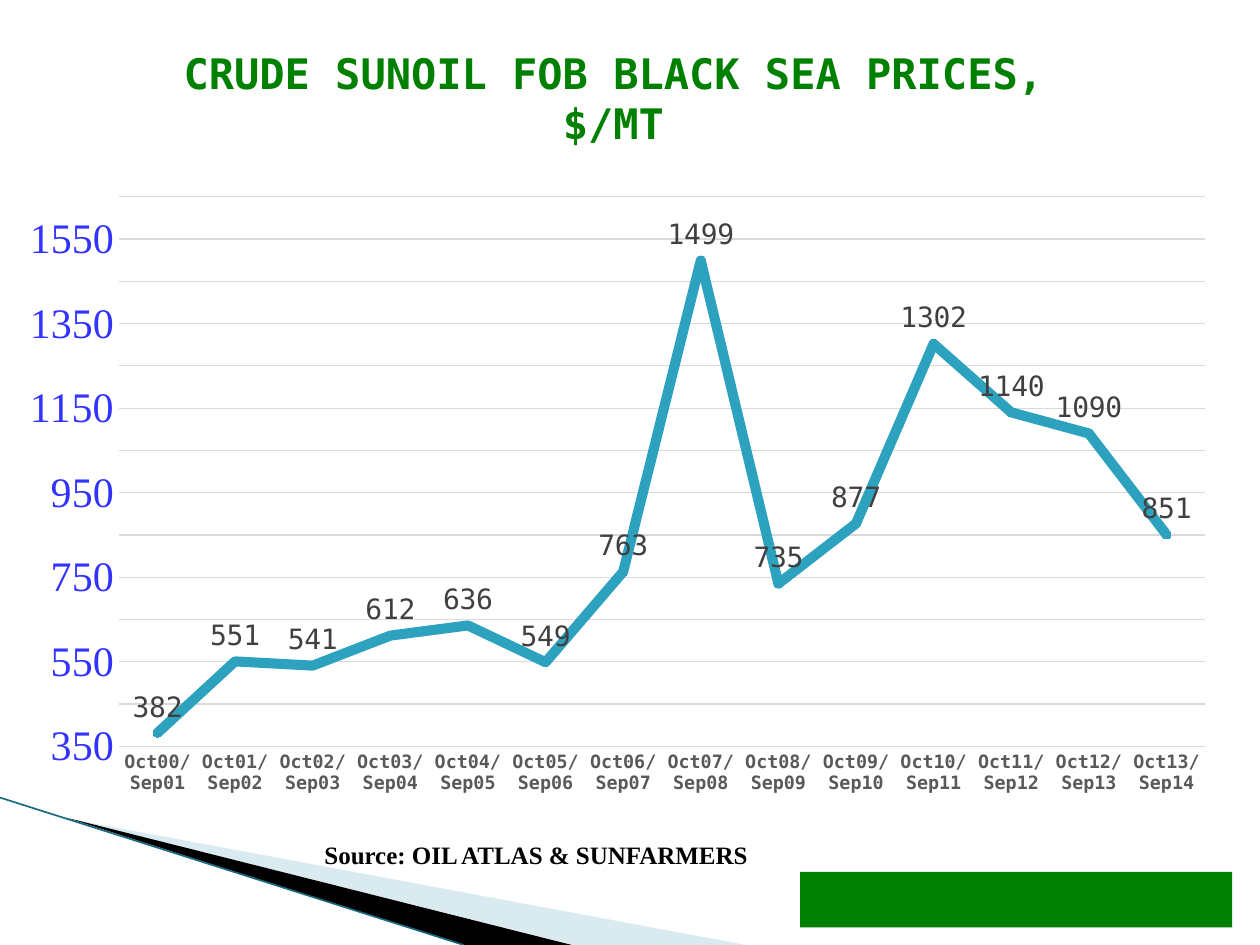
from dataclasses import dataclass

from lxml import etree
from pptx import Presentation
from pptx import util as u
from pptx.chart import data as chart_data
from pptx.dml import color
from pptx.enum import chart as charts
from pptx.enum import shapes, text
from pptx.oxml import ns

WIDTH, HEIGHT = u.Inches(10), u.Inches(7.5)
COLUMNS, ROWS = 100, 75
PRICES = [382, 551, 541, 612, 636, 549, 763, 1499, 735, 877, 1302, 1140, 1090, 851]
SEASONS = [f"Oct{year:02d}/Sep{year + 1:02d}" for year in range(len(PRICES))]
TITLE = "CRUDE SUNOIL FOB BLACK SEA PRICES,\n$/MT"


@dataclass(frozen=True)
class Theme:
    green: str = "008000"
    series: str = "2DA2BF"
    values: str = "3333FF"
    labels: str = "404040"
    seasons: str = "595959"
    grid: str = "D9D9D9"
    black: str = "000000"
    sweep: str = "A0CBDC"
    edge: str = "1B6B80"
    mono: str = "DejaVu Sans Mono"
    serif: str = "Times New Roman"
    title_size: float = 24
    value_size: float = 24
    label_size: float = 16
    season_size: float = 10.5
    source_size: float = 14.3
    chart_size: float = 10


THEME = Theme()


def across(columns):
    return int(WIDTH * columns / COLUMNS)


def down(rows):
    return int(HEIGHT * rows / ROWS)


def area(left, top, width, height):
    return across(left), down(top), across(width), down(height)


def rgb(value):
    return color.RGBColor.from_string(value)


def set_values(target, values):
    for name, value in values.items():
        setattr(target, name, value)


def set_font(font, name, size, shade, bold=False):
    set_values(font, {"name": name, "size": u.Pt(size), "bold": bold})
    font.color.rgb = rgb(shade)


def set_line(line, shade, width):
    line.color.rgb = rgb(shade)
    line.width = u.Pt(width)


def set_plain_fill(shape, shade):
    shape.shadow.inherit = False
    shape.fill.solid()
    shape.fill.fore_color.rgb = rgb(shade)
    shape.line.fill.background()


def add_sweep(page, points, shade, opacity=100):
    corners = [(across(x), down(y)) for x, y in points]
    builder = page.shapes.build_freeform(*corners[0])
    builder.add_line_segments(corners[1:], close=True)
    sweep = builder.convert_to_shape()
    set_plain_fill(sweep, shade)
    if opacity < 100:
        fill = sweep._element.spPr.find(ns.qn("a:solidFill"))
        etree.SubElement(fill[0], ns.qn("a:alpha"), val=str(opacity * 1000))


def add_edge(page, start, end):
    edge = page.shapes.add_connector(
        shapes.MSO_CONNECTOR.STRAIGHT,
        across(start[0]), down(start[1]), across(end[0]), down(end[1]),
    )
    set_line(edge.line, THEME.edge, 0.95)
    etree.SubElement(edge._element.spPr, ns.qn("a:effectLst"))


def add_block(page, place, shade):
    block = page.shapes.add_shape(shapes.MSO_SHAPE.RECTANGLE, *area(*place))
    set_plain_fill(block, shade)


def add_source(page, place, words):
    box = page.shapes.add_textbox(*area(*place))
    anchor = text.MSO_ANCHOR.MIDDLE
    set_values(box.text_frame, {"word_wrap": True, "vertical_anchor": anchor})
    para = box.text_frame.paragraphs[0]
    para.alignment = text.PP_ALIGN.CENTER
    span = para.add_run()
    span.text = words
    set_font(span.font, THEME.serif, THEME.source_size, THEME.black, True)


def set_layout(parent, shares, inner=False):
    for old in parent.findall(ns.qn("c:layout")):
        parent.remove(old)
    layout = etree.Element(ns.qn("c:layout"))
    manual = etree.SubElement(layout, ns.qn("c:manualLayout"))
    if inner:
        etree.SubElement(manual, ns.qn("c:layoutTarget"), val="inner")
    for side in ("xMode", "yMode"):
        etree.SubElement(manual, ns.qn(f"c:{side}"), val="edge")
    for side, share in shares.items():
        etree.SubElement(manual, ns.qn(f"c:{side}"), val=str(share))
    text_part = parent.find(ns.qn("c:tx"))
    if text_part is None:
        parent.insert(0, layout)
    else:
        text_part.addnext(layout)


def format_title(chart):
    chart.has_title = True
    title = chart.chart_title
    title.include_in_layout = False
    title.text_frame.text = TITLE
    for para in title.text_frame.paragraphs:
        para.alignment = text.PP_ALIGN.CENTER
        set_font(para.runs[0].font, THEME.mono, THEME.title_size, THEME.green, True)
    set_layout(title._element, {"x": 0.14, "y": 0})


def format_axes(chart):
    tick = charts.XL_TICK_MARK.NONE
    for axis in (chart.category_axis, chart.value_axis):
        set_values(axis, {"major_tick_mark": tick, "minor_tick_mark": tick})
    seasons, values = chart.category_axis, chart.value_axis
    set_font(seasons.tick_labels.font, THEME.mono, THEME.season_size, THEME.seasons, True)
    set_line(seasons.format.line, THEME.grid, 0.75)
    set_values(values, {"minimum_scale": 350, "maximum_scale": 1650, "major_unit": 100,
                        "has_major_gridlines": True})
    set_font(values.tick_labels.font, THEME.serif, THEME.value_size, THEME.values)
    values.format.line.fill.background()
    set_line(values.major_gridlines.format.line, THEME.grid, 0.75)


def format_series(series):
    series.smooth = False
    set_line(series.format.line, THEME.series, 5.75)
    set_values(series.marker, {"style": charts.XL_MARKER_STYLE.CIRCLE, "size": 5})
    series.marker.format.fill.solid()
    series.marker.format.fill.fore_color.rgb = rgb(THEME.series)
    series.marker.format.line.color.rgb = rgb(THEME.series)
    labels = series.data_labels
    set_values(labels, {"show_value": True, "position": charts.XL_LABEL_POSITION.ABOVE})
    set_font(labels.font, THEME.mono, THEME.label_size, THEME.labels)


def add_price_chart(page, place):
    prices = chart_data.CategoryChartData()
    prices.categories = SEASONS
    prices.add_series("Series 1", PRICES)
    kind = charts.XL_CHART_TYPE.LINE_MARKERS
    chart = page.shapes.add_chart(kind, *area(*place), prices).chart
    chart.has_legend = False
    set_font(chart.font, THEME.mono, THEME.chart_size, THEME.black)
    chart.plots[0].vary_by_categories = False
    format_title(chart)
    format_axes(chart)
    format_series(chart.plots[0].series[0])
    plot_area = chart._chartSpace.chart.plotArea
    set_layout(plot_area, {"x": 0.09, "y": 0.2, "w": 0.89, "h": 0.72}, inner=True)


def main():
    deck = Presentation()
    set_values(deck, {"slide_width": WIDTH, "slide_height": HEIGHT})
    page = deck.slides.add_slide(deck.slide_layouts[6])
    add_sweep(page, [(5.5, 65), (59.2, 75), (45.6, 75)], THEME.sweep, 40)
    add_sweep(page, [(5.3, 64.9), (45.4, 75), (36.8, 75)], THEME.black)
    add_edge(page, (0, 63.3), (36.8, 75))
    add_block(page, (63.5, 69.2, 34.3, 4.4), THEME.green)
    add_price_chart(page, (0.7, 3.5, 96.9, 60.6))
    add_source(page, (21.7, 64.9, 41.7, 5.8), "Source: OIL ATLAS & SUNFARMERS")
    deck.save("out.pptx")


if __name__ == "__main__":
    main()
